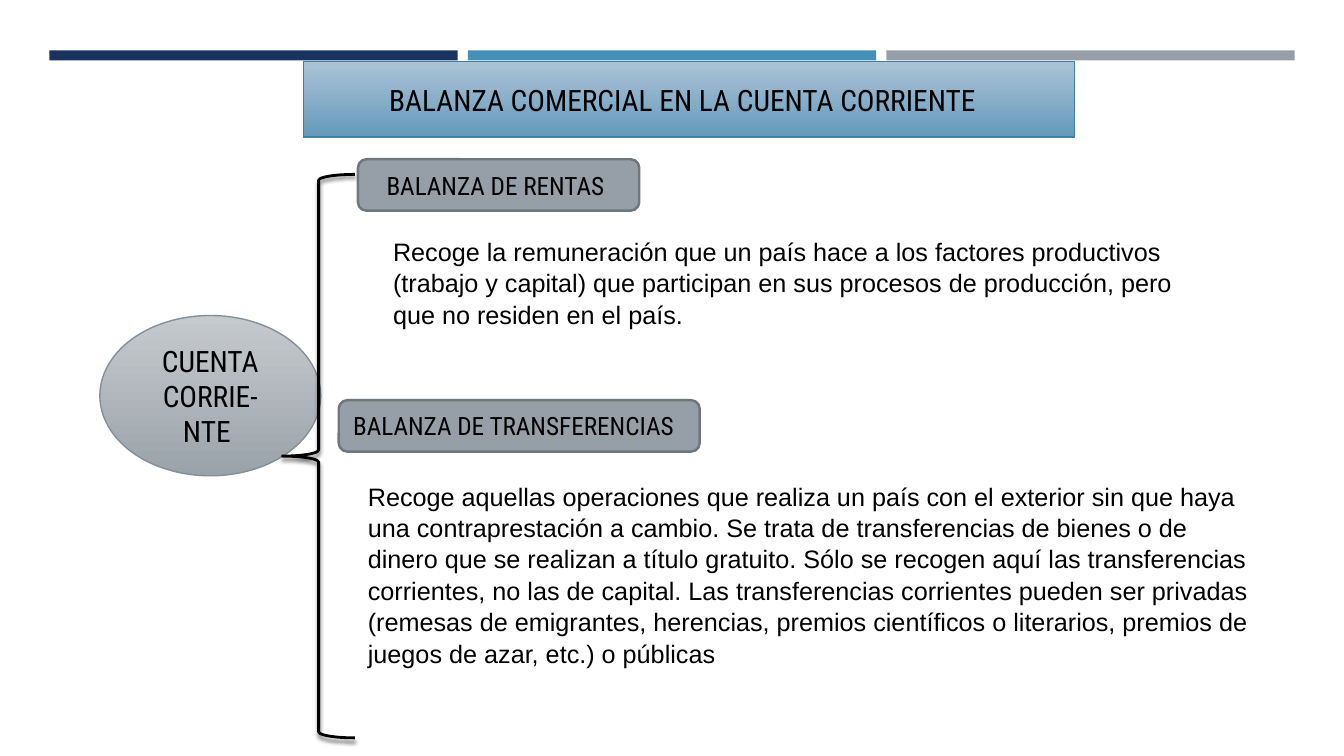
"""Slide on the income and transfer balances within the current account."""
from lxml import etree
from pptx import Presentation, util as u
from pptx.dml.color import RGBColor
from pptx.enum import shapes, text
from pptx.oxml import parse_xml
from pptx.oxml.ns import qn, nsdecls

BLACK = RGBColor(0, 0, 0)
NAVY = RGBColor(0x1A, 0x32, 0x60)
BLUE = RGBColor(0x45, 0x90, 0xB8)
GRAY = RGBColor(0x96, 0x9F, 0xA7)
EDGE = RGBColor(0x6F, 0x76, 0x7C)
SILVER = RGBColor(0xC0, 0xC5, 0xC9), RGBColor(0x9B, 0xA3, 0xAB)
RIM = RGBColor(0x85, 0x8F, 0x99)
SKY = RGBColor(0xA2, 0xBD, 0xD2), RGBColor(0x63, 0x99, 0xBC)
FRAME = RGBColor(0x3E, 0x82, 0xA6)
KIND = shapes.MSO_SHAPE

deck = Presentation()
deck.slide_width, deck.slide_height = u.Inches(13.33), u.Inches(7.5)
slide = deck.slides.add_slide(deck.slide_layouts[6])


def draw(kind, box, fill, line=None, width=1):
    """Add a shape with a plain fill, a pair of gradient colours, or none."""
    shape = slide.shapes.add_shape(kind, *map(u.Inches, box))
    shape.shadow.inherit = False
    if fill is None:
        shape.fill.background()
    elif isinstance(fill, RGBColor):
        shape.fill.solid()
        shape.fill.fore_color.rgb = fill
    else:
        shape.fill.gradient()
        shape.fill.gradient_angle = 270
        for stop, tone in zip(shape.fill.gradient_stops, fill):
            stop.color.rgb = tone
        first = next(shape._element.spPr.iter(qn("a:srgbClr")))
        etree.SubElement(first, qn("a:alpha")).set("val", "90000")
    if line is None:
        shape.line.fill.background()
    else:
        shape.line.color.rgb = line
        shape.line.width = u.Pt(width)
    return shape


def write(shape, words, size, font, align, pad=0):
    """Fill a shape with one paragraph; pad widens the right inset."""
    frame = shape.text_frame
    frame.word_wrap = True
    frame.margin_right = u.Inches(0.1 + pad)
    para = frame.paragraphs[0]
    para.text = words
    para.alignment = align
    para.font.size, para.font.name = u.Pt(size), font
    para.font.color.rgb = BLACK
    return frame


for col, tone in enumerate((NAVY, BLUE, GRAY)):
    draw(KIND.RECTANGLE, (0.49 + col * 4.15, 0.5, 4.05, 0.1), tone)

root = draw(KIND.OVAL, (0.99, 3.13, 2.19, 1.59), SILVER, RIM)
title = draw(KIND.RECTANGLE, (3.01, 0.61, 7.65, 0.75), SKY, FRAME)
brace = draw(KIND.LEFT_BRACE, (2.8, 1.73, 0.72, 5.59), None, BLACK, 2)
glow = brace._element.spPr.find(qn("a:effectLst"))
glow.append(parse_xml(
    f'<a:outerShdw {nsdecls("a")} blurRad="{u.Pt(3)}" dist="{u.Pt(2)}" '
    'dir="5400000" rotWithShape="0"><a:srgbClr val="000000">'
    '<a:alpha val="55000"/></a:srgbClr></a:outerShdw>'))

labels = [(root, "CUENTA CORRIE-NTE ", 21, 0),
          (title, "BALANZA COMERCIAL EN LA CUENTA CORRIENTE", 21, 0.13)]
for box, words, pad in (
        ((3.55, 1.58, 2.79, 0.51), "BALANZA DE RENTAS", 0.06),
        ((3.36, 3.97, 3.58, 0.51), "BALANZA DE TRANSFERENCIAS", 0.11)):
    pill = draw(KIND.ROUNDED_RECTANGLE, box, GRAY, EDGE, 1.75)
    labels.append((pill, words, 18, pad))
for shape, words, size, pad in labels:
    frame = write(shape, words, size, "Roboto Condensed",
                  text.PP_ALIGN.CENTER, pad)
    frame.vertical_anchor = text.MSO_ANCHOR.MIDDLE

for box, words in (
        ((3.8, 2.28, 8.23, 1.01),
         "Recoge la remuneración que un país hace a los factores productivos "
         "(trabajo y capital) que participan en sus procesos de producción, "
         "pero que no residen en el país."),
        ((3.55, 4.71, 8.95, 1.92),
         "Recoge aquellas operaciones que realiza un país con el exterior sin "
         "que haya una contraprestación a cambio. Se trata de transferencias "
         "de bienes o de dinero que se realizan a título gratuito. Sólo se "
         "recogen aquí las transferencias corrientes, no las de capital. Las "
         "transferencias corrientes pueden ser privadas (remesas de "
         "emigrantes, herencias, premios científicos o literarios, premios "
         "de juegos de azar, etc.) o públicas")):
    note = slide.shapes.add_textbox(*map(u.Inches, box))
    frame = write(note, words, 18, "Arial", text.PP_ALIGN.LEFT)
    frame.paragraphs[0].line_spacing = 1.04

deck.save("out.pptx")
